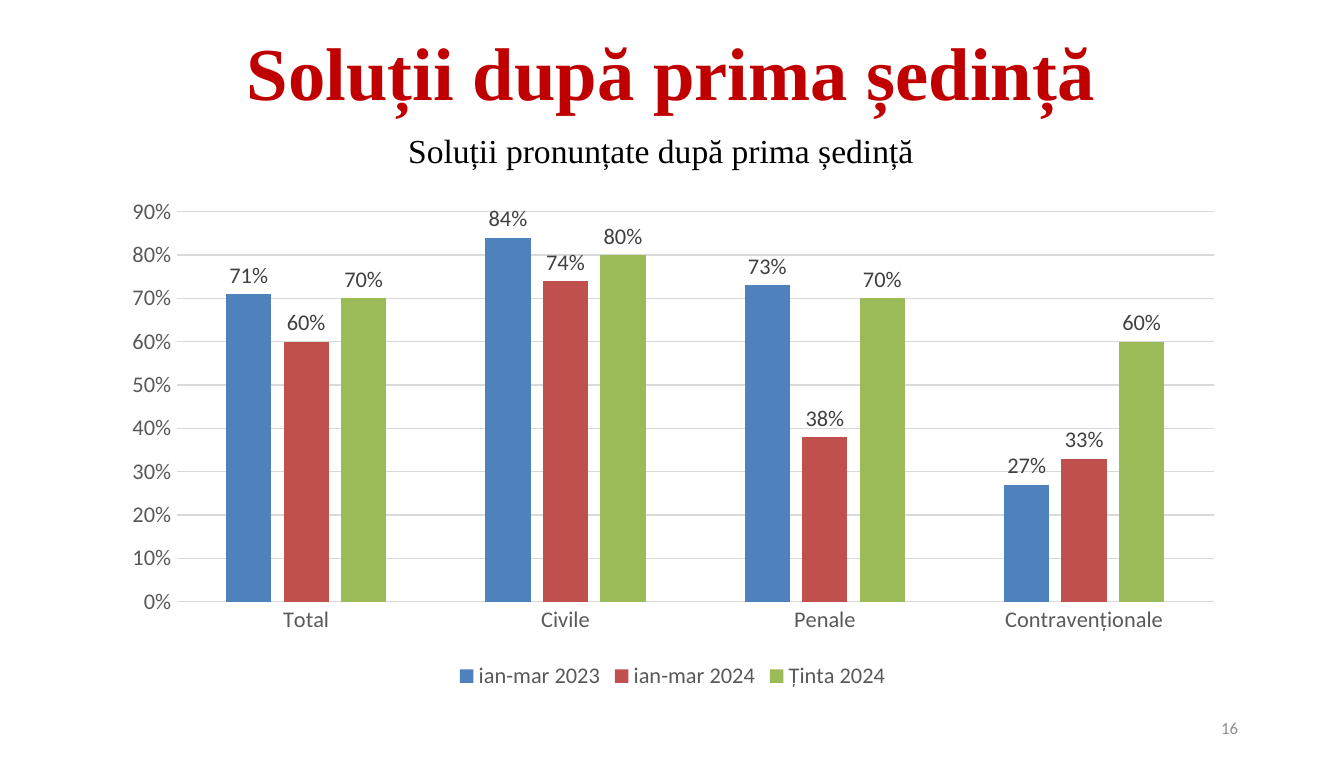
from lxml.etree import SubElement
from pptx import Presentation
from pptx.chart.data import CategoryChartData
from pptx.dml.color import RGBColor
from pptx.enum.chart import XL_CHART_TYPE, XL_LABEL_POSITION, XL_LEGEND_POSITION, XL_TICK_MARK
from pptx.enum.text import MSO_ANCHOR, MSO_AUTO_SIZE, PP_ALIGN
from pptx.oxml.ns import qn
from pptx.util import Inches, Pt

RED = RGBColor(0xC0, 0x00, 0x00)
BLACK = RGBColor(0x00, 0x00, 0x00)
PAGE_GREY = RGBColor(0x8C, 0x8C, 0x8C)
AXIS_GREY = RGBColor(0x59, 0x59, 0x59)
LABEL_GREY = RGBColor(0x40, 0x40, 0x40)
GRID_GREY = RGBColor(0xD9, 0xD9, 0xD9)
BLUE = RGBColor(0x4F, 0x81, 0xBD)
BRICK = RGBColor(0xC0, 0x50, 0x4D)
GREEN = RGBColor(0x9B, 0xBB, 0x59)

SERIF, SANS = "Times New Roman", "Calibri"
WIDTH, HEIGHT = Inches(10), Inches(5.67)

# Boxes as shares of the slide: left, top, width, height
TITLE_BOX = (0.05, 0.01, 0.912, 0.166)
CHART_BOX = (0.081, 0.148, 0.839, 0.764)
NUMBER_BOX = (0.706, 0.928, 0.225, 0.053)

CATEGORIES = ["Total", "Civile", "Penale", "Contravenționale"]
SERIES = [
    ("ian-mar 2023", BLUE, (0.71, 0.84, 0.73, 0.27)),
    ("ian-mar 2024", BRICK, (0.60, 0.74, 0.38, 0.33)),
    ("Ținta 2024", GREEN, (0.70, 0.80, 0.70, 0.60)),
]


def to_lengths(box):
    left, top, width, height = box
    return int(left * WIDTH), int(top * HEIGHT), int(width * WIDTH), int(height * HEIGHT)


def set_font(font, size, color, name=SANS, bold=False):
    font.size, font.name, font.bold = Pt(size), name, bold
    font.color.rgb = color


def write_text(frame, text, align=PP_ALIGN.CENTER, **font_format):
    para = frame.paragraphs[0]
    para.alignment = align
    span = para.add_run()
    span.text = text
    set_font(span.font, **font_format)


def set_layout(parent, **shares):
    """Place a chart part at shares of the chart area."""
    layout = parent.find(qn("c:layout"))
    if layout is None:
        layout = SubElement(parent, qn("c:layout"))
        text = parent.find(qn("c:tx"))
        if text is None:
            parent.insert(0, layout)
        else:
            text.addnext(layout)
    manual = SubElement(layout, qn("c:manualLayout"))
    if "w" in shares:
        SubElement(manual, qn("c:layoutTarget")).set("val", "inner")
    for side in ("x", "y"):
        SubElement(manual, qn(f"c:{side}Mode")).set("val", "edge")
    for key, share in shares.items():
        SubElement(manual, qn(f"c:{key}")).set("val", str(share))


def place_title(page, box):
    title = page.shapes.title
    title.left, title.top, title.width, title.height = to_lengths(box)
    frame = title.text_frame
    frame.auto_size = MSO_AUTO_SIZE.NONE
    frame.vertical_anchor = MSO_ANCHOR.MIDDLE
    write_text(frame, "Soluții după prima ședință ", size=40, color=RED, name=SERIF, bold=True)


def place_number(page, box):
    frame = page.shapes.add_textbox(*to_lengths(box)).text_frame
    frame.word_wrap = True
    frame.vertical_anchor = MSO_ANCHOR.MIDDLE
    write_text(frame, "16", align=PP_ALIGN.RIGHT, size=9, color=PAGE_GREY)


def format_axes(chart):
    for axis in (chart.category_axis, chart.value_axis):
        axis.major_tick_mark = axis.minor_tick_mark = XL_TICK_MARK.NONE
        set_font(axis.tick_labels.font, 12, AXIS_GREY)
    values = chart.value_axis
    values.minimum_scale, values.maximum_scale, values.major_unit = 0, 0.9, 0.1
    values.tick_labels.number_format = "0%"
    values.tick_labels.number_format_is_linked = False
    values.format.line.fill.background()
    for line in (chart.category_axis.format.line, values.major_gridlines.format.line):
        line.color.rgb = GRID_GREY
        line.width = Pt(0.75)


def format_columns(plot):
    plot.gap_width, plot.overlap = 219, -27
    plot.vary_by_categories = False
    for series, (_, color, _) in zip(plot.series, SERIES):
        series.format.fill.solid()
        series.format.fill.fore_color.rgb = color
        series.invert_if_negative = False
        labels = series.data_labels
        labels.show_value = True
        labels.position = XL_LABEL_POSITION.OUTSIDE_END
        labels.number_format, labels.number_format_is_linked = "0%", False
        set_font(labels.font, 12, LABEL_GREY)


def place_chart(page, box):
    data = CategoryChartData(number_format="0%")
    data.categories = CATEGORIES
    for name, _, values in SERIES:
        data.add_series(name, values)
    chart = page.shapes.add_chart(XL_CHART_TYPE.COLUMN_CLUSTERED, *to_lengths(box), data).chart
    set_font(chart.font, 10, BLACK)

    # Heading above the columns
    chart.has_title = True
    heading = chart.chart_title
    write_text(heading.text_frame, "Soluții pronunțate după prima ședință",
               size=18, color=BLACK, name=SERIF)
    heading.include_in_layout = False
    set_layout(heading.text_frame.paragraphs[0].runs[0]._r.getroottree().find(
        f".//{qn('c:title')}"), x=0.26, y=0.02)

    # Columns, axes and legend
    format_columns(chart.plots[0])
    format_axes(chart)
    set_layout(chart.element.find(f".//{qn('c:plotArea')}"), x=0.06, y=0.17, w=0.92, h=0.67)
    chart.has_legend = True
    chart.legend.position = XL_LEGEND_POSITION.BOTTOM
    chart.legend.include_in_layout = False
    set_font(chart.legend.font, 12, AXIS_GREY)


def main():
    deck = Presentation()
    deck.slide_width, deck.slide_height = WIDTH, HEIGHT
    page = deck.slides.add_slide(deck.slide_layouts[5])
    place_title(page, TITLE_BOX)
    place_number(page, NUMBER_BOX)
    place_chart(page, CHART_BOX)
    deck.save("out.pptx")


if __name__ == "__main__":
    main()
